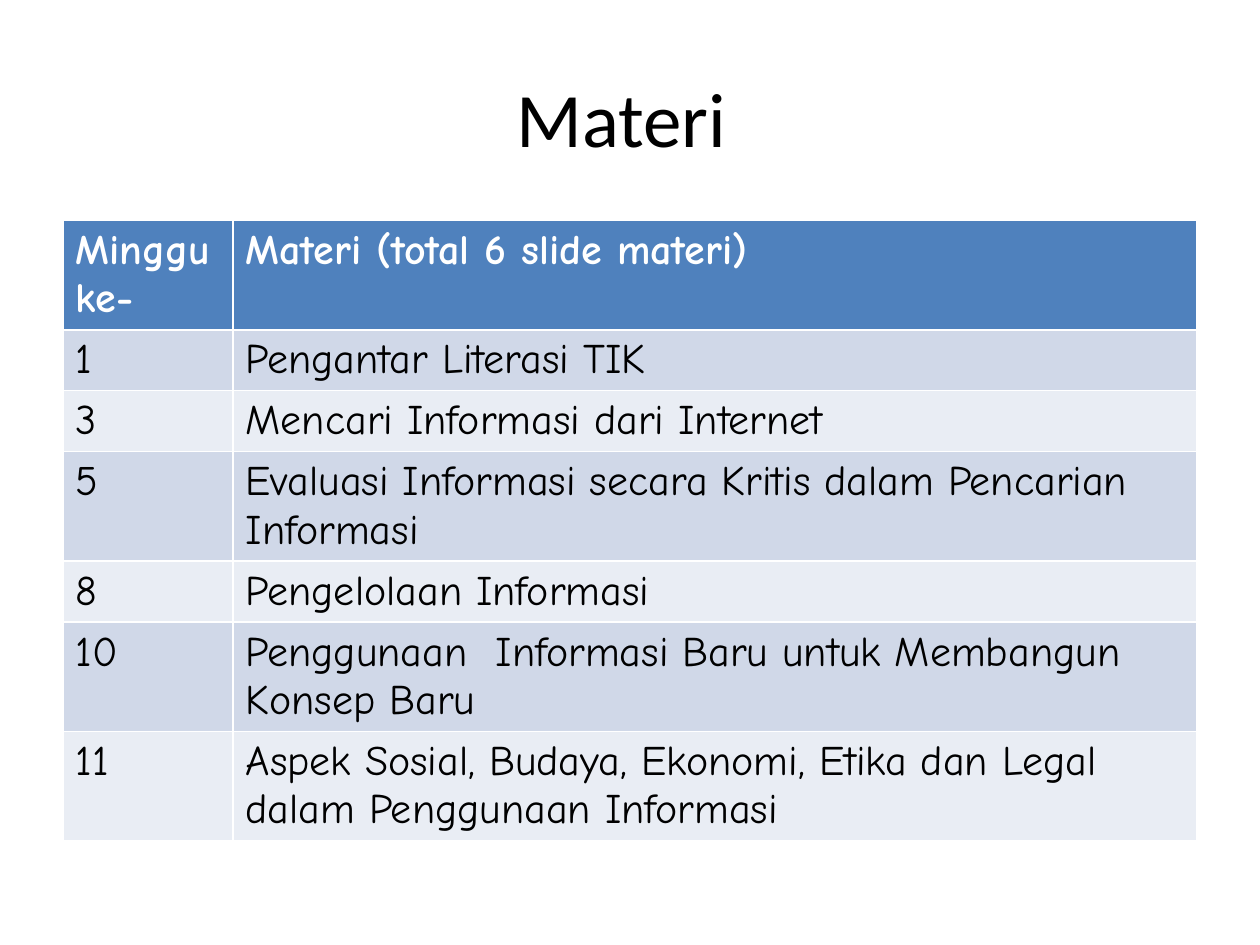
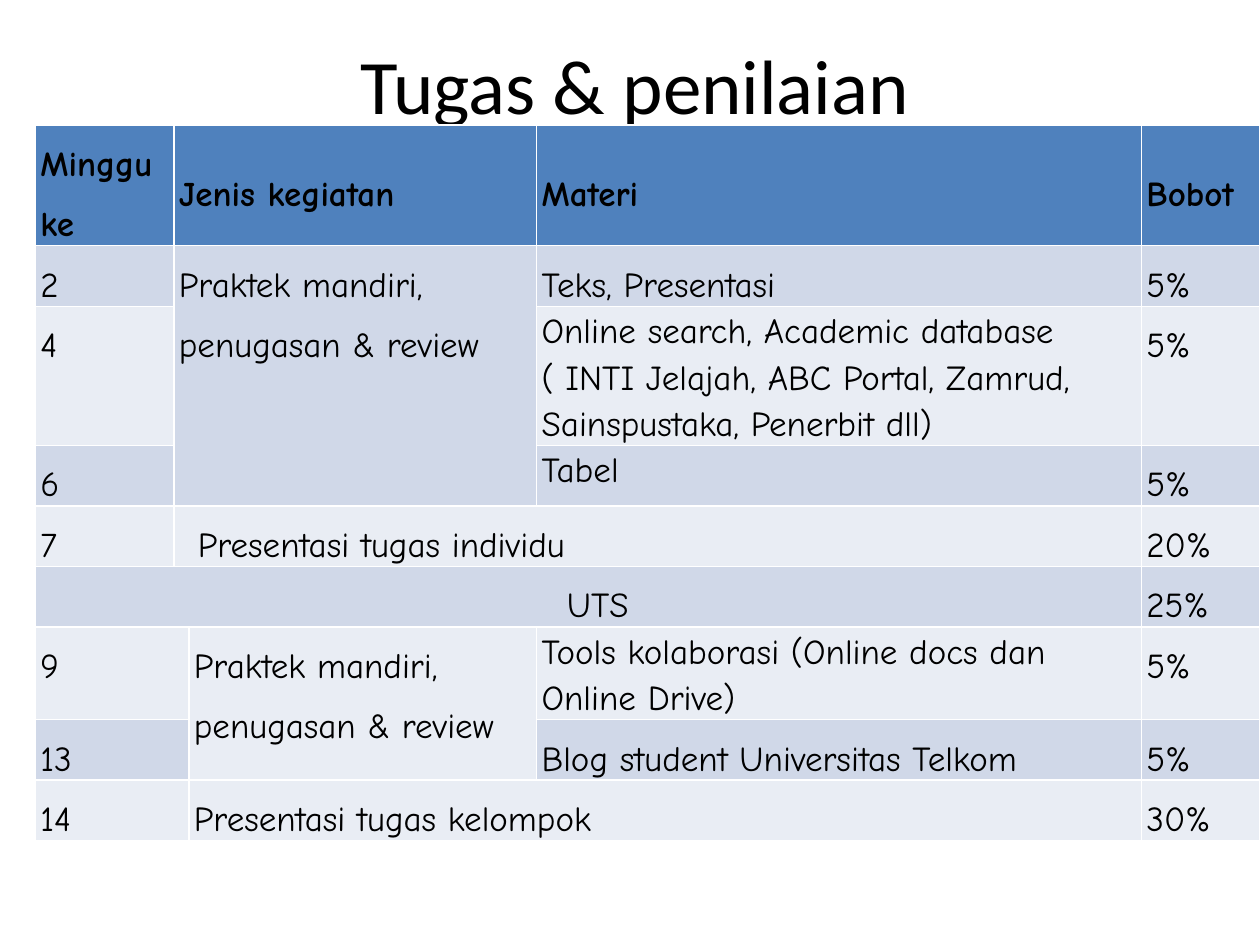
from dataclasses import dataclass
from typing import NamedTuple

from pptx import Presentation
from pptx import util as u
from pptx.dml.color import RGBColor
from pptx.enum import text

BLACK = RGBColor(0x00, 0x00, 0x00)
WHITE = RGBColor(0xFF, 0xFF, 0xFF)
HEADER_BLUE = RGBColor(0x4F, 0x81, 0xBD)
ROW_FILLS = (RGBColor(0xE9, 0xED, 0xF4), RGBColor(0xD0, 0xD8, 0xE8))
TITLE_FONT = "Calibri"
TABLE_FONT = "Comic Neue"
TITLE_ONLY = 5
ROW_HEIGHT = 29.52
INDENT = 10.8
CENTER = text.PP_ALIGN.CENTER
JUSTIFY = text.PP_ALIGN.JUSTIFY


class Entry(NamedTuple):
    row: int
    column: int
    wording: str
    rows: int = 1
    columns: int = 1
    spacing: float | None = None
    after: float | None = None
    align: text.PP_ALIGN | None = None
    left: float = 0
    first: float = 0


@dataclass(frozen=True)
class Schedule:
    title: str
    title_at: tuple[float, float]
    left: float
    top: float
    height: float
    columns: tuple[float, ...]
    row_count: int
    header_height: float
    header_color: RGBColor
    header_anchor: text.MSO_ANCHOR
    font_size: float
    insets: tuple[float, float]
    entries: list[Entry]


def topic_entries() -> list[Entry]:
    topics = [
        ("Minggu ke-", "Materi (total 6 slide materi)"),
        ("1", "Pengantar Literasi TIK"),
        ("3", "Mencari Informasi dari Internet"),
        ("5", "Evaluasi Informasi secara Kritis dalam Pencarian Informasi"),
        ("8", "Pengelolaan Informasi"),
        ("10", "Penggunaan  Informasi Baru untuk Membangun Konsep Baru"),
        ("11", "Aspek Sosial, Budaya, Ekonomi, Etika dan Legal dalam Penggunaan Informasi"),
    ]
    return [Entry(row, column, wording)
            for row, topic in enumerate(topics)
            for column, wording in enumerate(topic)]


def task_entries() -> list[Entry]:
    practice = "Praktek mandiri, penugasan & review"
    weeks = ["Minggu ke", "2", "4", "6", "7", "UTS", "9", "13", "14"]
    weights = ["Bobot", "5%", "5%", "5%", "20%", "25%", "5%", "5%", "30%"]
    week_spans = {5: 4, 6: 2, 7: 2, 8: 2}
    entries = []
    for row, (week, weight) in enumerate(zip(weeks, weights)):
        midterm = row == 5
        entries.append(Entry(row, 0, week, columns=week_spans.get(row, 1), spacing=1.5,
                             align=CENTER if midterm else None,
                             left=INDENT if midterm else 0))
        hanging = row in (4, 5)
        entries.append(Entry(row, 4, weight, spacing=1.5,
                             align=JUSTIFY if hanging else None,
                             left=INDENT if hanging else 0,
                             first=-INDENT if hanging else 0))
    return entries + [
        Entry(0, 1, "Jenis kegiatan", columns=2, spacing=1.5),
        Entry(1, 1, practice, rows=3, columns=2, spacing=1.5),
        Entry(4, 1, "Presentasi tugas individu", columns=3, spacing=1.5, left=INDENT),
        Entry(6, 2, practice, rows=2, spacing=1.5),
        Entry(8, 2, "Presentasi tugas kelompok", columns=2, spacing=1.5),
        Entry(0, 3, "Materi", spacing=1.5),
        Entry(1, 3, "Teks, Presentasi", spacing=1.5),
        Entry(2, 3, "Online search, Academic database ( INTI Jelajah, ABC Portal, Zamrud, "
                    "Sainspustaka, Penerbit dll)", spacing=1.15, after=10),
        Entry(3, 3, "Tabel", spacing=1.15, after=10),
        Entry(6, 3, "Tools kolaborasi (Online docs dan Online Drive)", spacing=1.15, after=10),
        Entry(7, 3, "Blog student Universitas Telkom", spacing=1.5),
    ]


SCHEDULES = [
    Schedule("Materi ", (36, 21.6), 36, 126, 367.2, (97.2, 550.8), 7, ROW_HEIGHT,
             WHITE, text.MSO_ANCHOR.TOP, 24, (7.2, 3.6), topic_entries()),
    Schedule("Tugas & penilaian", (38.88, 2.88), 20.16, 71.28, 424.08,
             (79.2, 6.48, 198.72, 345.6, 67.68), 9, 58.32,
             BLACK, text.MSO_ANCHOR.MIDDLE, 20, (2.88, 0), task_entries()),
]


def style_font(font: text.MSO_ANCHOR, name: str, size: float, color: RGBColor, bold: bool) -> None:
    font.name = name
    font.size = u.Pt(size)
    font.color.rgb = color
    font.bold = bold


def place_title(slide, schedule: Schedule) -> None:
    title = slide.shapes.title
    left, top = schedule.title_at
    title.left, title.top = u.Pt(left), u.Pt(top)
    title.width, title.height = u.Pt(648), u.Pt(90)
    title.text_frame.text = schedule.title
    title.text_frame.vertical_anchor = text.MSO_ANCHOR.MIDDLE
    paragraph = title.text_frame.paragraphs[0]
    paragraph.alignment = CENTER
    style_font(paragraph.runs[0].font, TITLE_FONT, 44, BLACK, False)


def write_entry(grid, schedule: Schedule, entry: Entry) -> None:
    cell = grid.cell(entry.row, entry.column)
    if entry.rows * entry.columns > 1:
        cell.merge(grid.cell(entry.row + entry.rows - 1, entry.column + entry.columns - 1))
    header = entry.row == 0
    cell.vertical_anchor = schedule.header_anchor if header else text.MSO_ANCHOR.TOP
    cell.text_frame.text = entry.wording
    paragraph = cell.text_frame.paragraphs[0]
    paragraph.alignment = entry.align
    paragraph.line_spacing = entry.spacing
    if entry.after is not None:
        paragraph.space_after = u.Pt(entry.after)
    if entry.left:
        properties = paragraph._p.get_or_add_pPr()
        properties.set("marL", str(u.Pt(entry.left)))
        properties.set("indent", str(u.Pt(entry.first)))
    style_font(paragraph.runs[0].font, TABLE_FONT, schedule.font_size,
               schedule.header_color if header else BLACK, header)


def place_schedule(slide, schedule: Schedule) -> None:
    frame = slide.shapes.add_table(
        schedule.row_count, len(schedule.columns), u.Pt(schedule.left), u.Pt(schedule.top),
        u.Pt(sum(schedule.columns)), u.Pt(schedule.height))
    grid = frame.table
    for column, width in zip(grid.columns, schedule.columns):
        column.width = u.Pt(width)
    side, edge = schedule.insets
    for index, row in enumerate(grid.rows):
        row.height = u.Pt(ROW_HEIGHT if index else schedule.header_height)
        for cell in row.cells:
            cell.fill.solid()
            cell.fill.fore_color.rgb = ROW_FILLS[index % 2] if index else HEADER_BLUE
            cell.margin_left = cell.margin_right = u.Pt(side)
            cell.margin_top = cell.margin_bottom = u.Pt(edge)
    for entry in schedule.entries:
        write_entry(grid, schedule, entry)
    frame.height = u.Pt(schedule.height)


def main() -> None:
    deck = Presentation()
    deck.slide_width, deck.slide_height = u.Pt(720), u.Pt(540)
    for schedule in SCHEDULES:
        slide = deck.slides.add_slide(deck.slide_layouts[TITLE_ONLY])
        place_title(slide, schedule)
        place_schedule(slide, schedule)
    deck.save("out.pptx")


if __name__ == "__main__":
    main()
